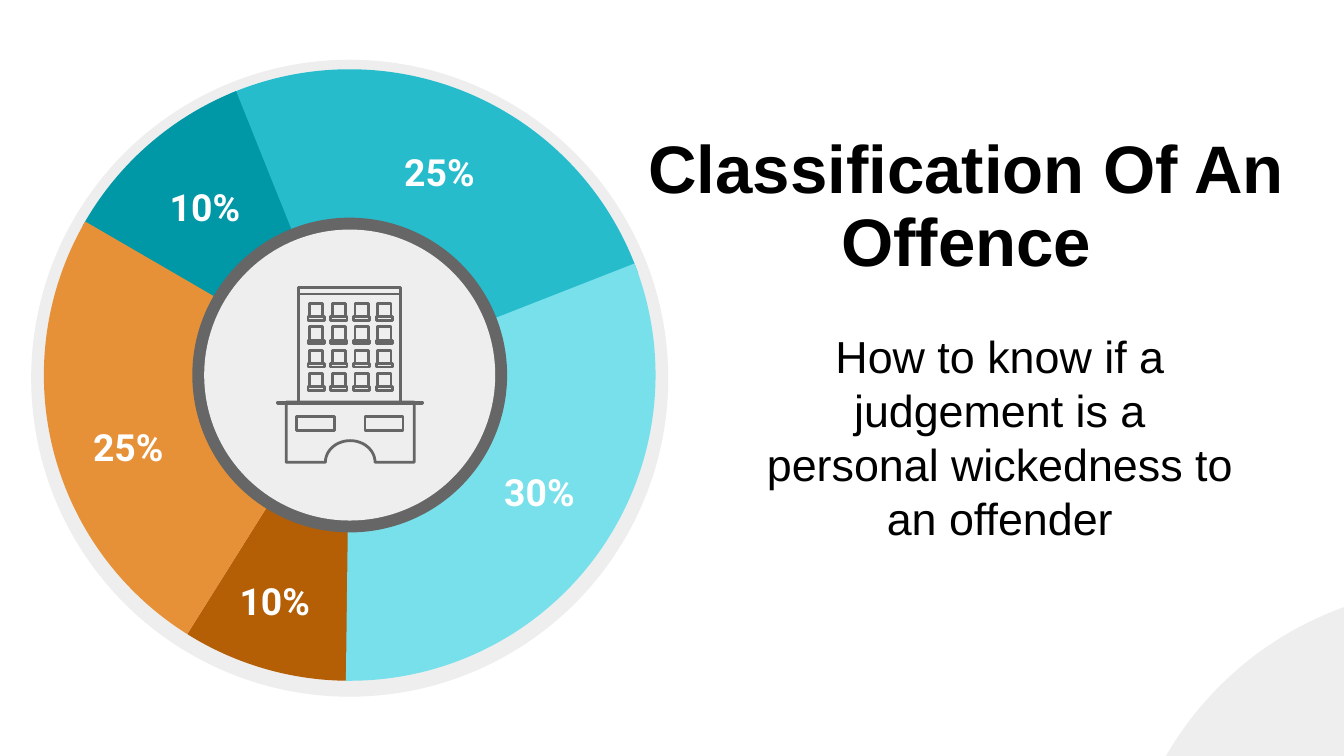
from math import cos, radians, sin

from pptx import Presentation
from pptx.dml.color import RGBColor
from pptx.enum.shapes import MSO_SHAPE
from pptx.enum.text import MSO_ANCHOR, MSO_AUTO_SIZE, PP_ALIGN
from pptx.util import Cm, Pt

OVAL, PIE, RECTANGLE = MSO_SHAPE.OVAL, MSO_SHAPE.PIE, MSO_SHAPE.RECTANGLE
TOP, MIDDLE, BOTTOM = MSO_ANCHOR.TOP, MSO_ANCHOR.MIDDLE, MSO_ANCHOR.BOTTOM
CENTER = PP_ALIGN.CENTER
FIXED = MSO_AUTO_SIZE.NONE

COLOURS = {
    "black": "000000",
    "white": "FFFFFF",
    "pale": "EEEEEE",
    "grey": "666666",
    "turquoise": "26BCCC",
    "teal": "0097A7",
    "brown": "B45F06",
    "orange": "E69138",
    "aqua": "78E0EA",
}


def arc(x, y, radius_x, radius_y, start, end, steps=60):
    angles = [radians(start + (end - start) * i / steps) for i in range(steps + 1)]
    return [(x + radius_x * cos(a), y + radius_y * sin(a)) for a in angles]


class OffenceSlide:
    """Draw styled elements on the current slide, with lengths in centimetres."""

    def __init__(self, page):
        self.page = page

    def colour(self, name):
        return RGBColor.from_string(COLOURS[name])

    def paint(self, shape, fill, line=None):
        shape.shadow.inherit = False
        if fill:
            shape.fill.solid()
            shape.fill.fore_color.rgb = self.colour(fill)
        else:
            shape.fill.background()
        if line:
            shape.line.color.rgb = self.colour(line)
            shape.line.width = Pt(1.5)
        else:
            shape.line.fill.background()
        return shape

    def preset(self, kind, left, top, width, height, fill, line=None):
        shape = self.page.shapes.add_shape(kind, Cm(left), Cm(top), Cm(width), Cm(height))
        return self.paint(shape, fill, line)

    def disc(self, x, y, diameter, fill, kind=OVAL):
        radius = diameter / 2
        return self.preset(kind, x - radius, y - radius, diameter, diameter, fill)

    def wedge(self, x, y, diameter, start, end, fill):
        shape = self.disc(x, y, diameter, fill, PIE)
        for index, angle in enumerate((start, end)):
            shape.adjustments[index] = angle * 0.6

    def outline(self, left, top, width, height):
        self.preset(RECTANGLE, left, top, width, height, None, "grey")

    def polygon(self, points, fill, line=None):
        corners = [(Cm(x), Cm(y)) for x, y in points]
        builder = self.page.shapes.build_freeform(*corners[0])
        builder.add_line_segments(corners[1:], close=True)
        self.paint(builder.convert_to_shape(), fill, line)

    def style_text(self, box, text, size, font, colour, bold, anchor):
        frame = box.text_frame
        frame.text = text
        frame.word_wrap = True
        frame.auto_size = FIXED
        frame.vertical_anchor = anchor
        frame.margin_left = frame.margin_right = Cm(0.25)
        frame.margin_top = frame.margin_bottom = Cm(0.25)
        para = frame.paragraphs[0]
        para.alignment = CENTER
        span = para.runs[0].font
        span.size, span.name, span.bold = Pt(size), font, bold
        span.color.rgb = self.colour(colour)
        return para

    def title(self, text, left, top, width, height):
        box = self.page.shapes.title
        box.left, box.top, box.width, box.height = Cm(left), Cm(top), Cm(width), Cm(height)
        self.style_text(box, text, 36, "Arial", "black", True, BOTTOM).line_spacing = 0.9

    def subtitle(self, text, left, top, width, height):
        box = self.page.shapes.add_textbox(Cm(left), Cm(top), Cm(width), Cm(height))
        self.style_text(box, text, 24, "Arial", "black", False, TOP)

    def label(self, text, left, top):
        box = self.page.shapes.add_textbox(Cm(left), Cm(top), Cm(2.31), Cm(0.9))
        self.style_text(box, text, 20, "Roboto", "white", True, MIDDLE)

    def building(self):
        facade = [(5.41, 8.74), *arc(6.62, 8.74, 0.47, 0.41, 180, 360, 24)]
        self.polygon(facade + [(7.83, 8.74), (7.83, 7.6), (5.41, 7.6)], None, "grey")
        for left in (5.6, 6.9):
            self.outline(left, 7.88, 0.72, 0.26)
        self.outline(5.64, 5.43, 1.93, 0.13)
        self.outline(5.25, 7.6, 2.73, 0.03)
        self.outline(5.64, 5.56, 1.93, 2.04)
        for row in range(4):
            for column in range(4):
                left, top = 5.85 + 0.43 * column, 5.74 + 0.44 * row
                self.outline(left, top, 0.25, 0.25)
                self.outline(left - 0.03, top + 0.25, 0.31, 0.07)


def main():
    deck = Presentation()
    deck.slide_width, deck.slide_height = Cm(25.4), Cm(14.29)
    slide = OffenceSlide(deck.slides.add_slide(deck.slide_layouts[5]))

    slide.polygon([(27.56, 17.48), *arc(27.56, 17.48, 6.38, 6.38, 165, 270)], "pale")
    slide.title("Classification Of An Offence", 11.48, 2.21, 13.56, 3.35)
    slide.subtitle("How to know if a judgement is a personal wickedness to an offender",
                   14.17, 5.97, 9.45, 4.47)

    x, y = 6.61, 7.09
    slide.disc(x, y + 0.06, 12.04, "pale")
    for start, end, fill in (
        (247, 340.61, "turquoise"),
        (209.18, 248.18, "teal"),
        (89.97, 122.08, "brown"),
        (122.08, 210.13, "orange"),
        (338.62, 90.71, "aqua"),
    ):
        slide.wedge(x, y, 11.56, start, end, fill)

    for text, left, top in (
        ("10%", 2.72, 3.45),
        ("25%", 7.15, 2.8),
        ("30%", 9.04, 8.84),
        ("10%", 4.04, 10.9),
        ("25%", 1.27, 8),
    ):
        slide.label(text, left, top)

    slide.disc(x, y, 5.95, "grey")
    slide.disc(x, y, 5.5, "pale")
    slide.building()
    deck.save("out.pptx")


if __name__ == "__main__":
    main()
